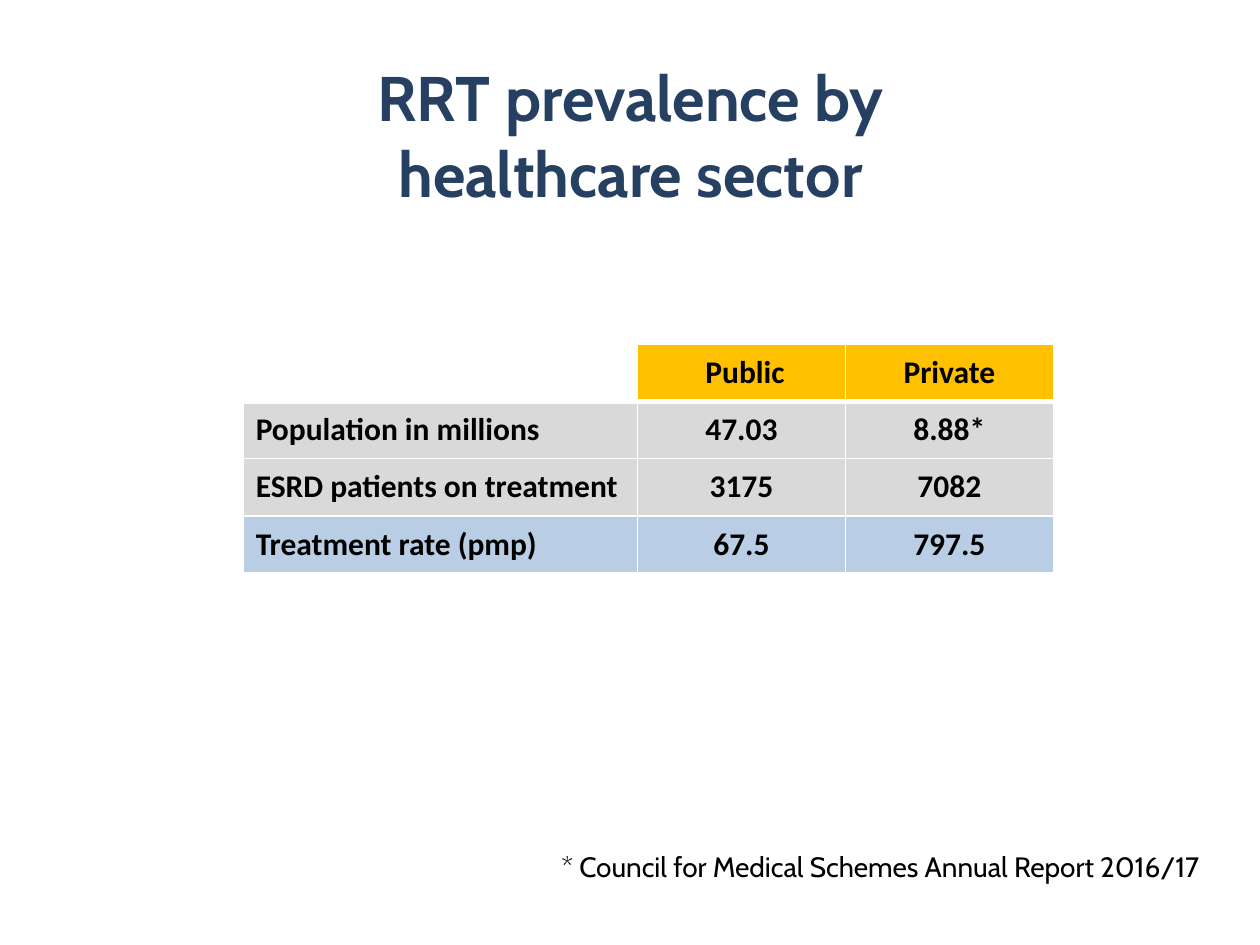
from dataclasses import dataclass
from typing import Optional

from lxml.etree import SubElement
from pptx import Presentation
from pptx.dml.color import RGBColor
from pptx.enum.text import MSO_ANCHOR, MSO_AUTO_SIZE, PP_ALIGN
from pptx.oxml.ns import qn
from pptx.util import Inches, Pt


@dataclass(frozen=True)
class Theme:
    title: str = "254061"
    text: str = "000000"
    border: str = "FFFFFF"
    header: str = "FFC000"
    body: str = "D9D9D9"
    highlight: str = "B9CDE5"
    heading_font: str = "Cabin"
    table_font: str = "Calibri"
    title_size: int = 36
    table_size: int = 18
    note_size: int = 16


@dataclass(frozen=True)
class TableRow:
    values: tuple[str, str, str]
    fill: str
    bottom_border: float = 1


THEME = Theme()
ROWS = (
    TableRow(("", " Public", "Private"), THEME.header, bottom_border=3),
    TableRow(("Population in millions", "47.03", "8.88*"), THEME.body),
    TableRow(("ESRD patients on treatment", "3175", "7082"), THEME.body),
    TableRow(("Treatment rate (pmp)", "67.5", "797.5"), THEME.highlight),
)
COLUMN_WIDTHS = (3.13, 1.65, 1.65)
ROW_HEIGHT = 0.455


def format_paragraph(paragraph, font: str, size: int, color: str,
                     bold: bool, alignment: PP_ALIGN) -> None:
    paragraph.alignment = alignment
    paragraph.font.name = font
    paragraph.font.size = Pt(size)
    paragraph.font.bold = bold
    paragraph.font.color.rgb = RGBColor.from_string(color)


def set_borders(cell, widths: dict[str, float]) -> None:
    properties = cell._tc.get_or_add_tcPr()
    for index, (edge, width) in enumerate(widths.items()):
        line = SubElement(properties, qn(f"a:{edge}"), w=str(Pt(width)))
        fill = SubElement(line, qn("a:solidFill"))
        SubElement(fill, qn("a:srgbClr"), val=THEME.border)
        properties.insert(index, line)


def fill_cell(cell, text: str, fill: Optional[str], alignment: PP_ALIGN) -> None:
    cell.text = text
    cell.vertical_anchor = MSO_ANCHOR.MIDDLE
    if fill:
        cell.fill.solid()
        cell.fill.fore_color.rgb = RGBColor.from_string(fill)
    else:
        cell.fill.background()
    format_paragraph(cell.text_frame.paragraphs[0], THEME.table_font,
                     THEME.table_size, THEME.text, True, alignment)


def add_prevalence_table(slide) -> None:
    frame = slide.shapes.add_table(
        len(ROWS), len(COLUMN_WIDTHS), Inches(1.93), Inches(2.73),
        Inches(sum(COLUMN_WIDTHS)), Inches(ROW_HEIGHT * len(ROWS)))
    table = frame.table
    for column, width in zip(table.columns, COLUMN_WIDTHS):
        column.width = Inches(width)
    top_border = 1
    for index, row in enumerate(ROWS):
        table.rows[index].height = Inches(ROW_HEIGHT)
        for position, text in enumerate(row.values):
            cell = table.cell(index, position)
            alignment = PP_ALIGN.CENTER if position else PP_ALIGN.LEFT
            fill_cell(cell, text, row.fill if text else None, alignment)
            set_borders(cell, {"lnL": 1, "lnR": 1, "lnT": top_border,
                               "lnB": row.bottom_border})
        top_border = row.bottom_border


def add_title(slide) -> None:
    title = slide.shapes.title
    title.left, title.top = Inches(1.06), Inches(0.44)
    title.width, title.height = Inches(7.89), Inches(1.25)
    title.text_frame.text = "RRT prevalence by\vhealthcare sector"
    title.text_frame.vertical_anchor = MSO_ANCHOR.MIDDLE
    format_paragraph(title.text_frame.paragraphs[0], THEME.heading_font,
                     THEME.title_size, THEME.title, True, PP_ALIGN.CENTER)


def add_source_note(slide) -> None:
    note = slide.shapes.add_textbox(Inches(1.61), Inches(6.69), Inches(8.01), Inches(0.37))
    note.text_frame.word_wrap = True
    note.text_frame.auto_size = MSO_AUTO_SIZE.SHAPE_TO_FIT_TEXT
    note.text_frame.text = "* Council for Medical Schemes Annual Report 2016/17"
    format_paragraph(note.text_frame.paragraphs[0], THEME.heading_font,
                     THEME.note_size, THEME.text, False, PP_ALIGN.RIGHT)


def main() -> None:
    """Build the slide on renal replacement therapy prevalence by sector."""
    presentation = Presentation()
    presentation.slide_width, presentation.slide_height = Inches(10), Inches(7.5)
    slide = presentation.slides.add_slide(presentation.slide_layouts[5])
    add_title(slide)
    add_prevalence_table(slide)
    add_source_note(slide)
    presentation.save("out.pptx")


if __name__ == "__main__":
    main()
